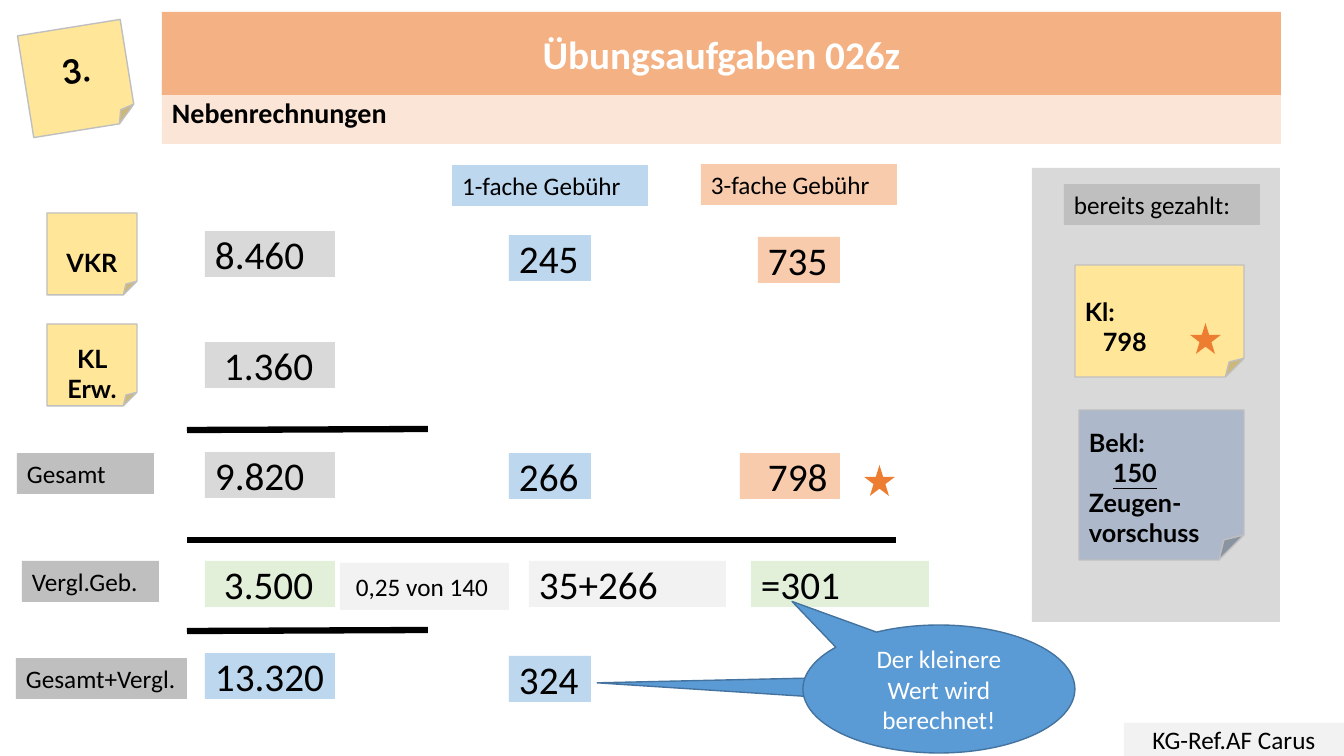
from dataclasses import dataclass

from lxml import etree
from pptx import Presentation
from pptx import util as u
from pptx.dml.color import RGBColor
from pptx.enum import shapes, text
from pptx.oxml.ns import qn

SCALE = 12192000 / 1344
SHAPE = shapes.MSO_SHAPE
LEFT, CENTER = text.PP_ALIGN.LEFT, text.PP_ALIGN.CENTER


def px(length):
    return u.Emu(round(length * SCALE))


@dataclass(frozen=True)
class Theme:
    black: str = "000000"
    white: str = "FFFFFF"
    pale: str = "F2F2F2"
    light: str = "D9D9D9"
    grey: str = "BFBFBF"
    header: str = "F4B183"
    band: str = "FBE5D6"
    peach: str = "F8CBAD"
    sky: str = "BDD7EE"
    mint: str = "E2F0D9"
    yellow: str = "FFE699"
    slate: str = "ADB9CA"
    star: str = "ED7D31"
    callout: str = "5B9BD5"
    outline: str = "43739E"
    sans: str = "Calibri"
    note: str = "Lato"
    label: int = 18
    subtitle: int = 20
    number: int = 24
    figure: int = 28
    thin: float = 1
    rule: float = 4.5


@dataclass(frozen=True)
class Line:
    words: str
    indent: int = 0
    underline: bool = False


class Sheet:
    def __init__(self, deck, theme):
        self.theme = theme
        self.page = deck.slides.add_slide(deck.slide_layouts[1])
        self.canvas = self.page.shapes

    def start_group(self):
        self.canvas = self.page.shapes.add_group_shape().shapes

    def end_group(self):
        self.canvas = self.page.shapes

    def paint(self, box, fill, outline=None):
        box.fill.solid()
        box.fill.fore_color.rgb = RGBColor.from_string(fill)
        if outline:
            box.line.color.rgb = RGBColor.from_string(outline)
            box.line.width = u.Pt(self.theme.thin)
        else:
            box.line.fill.background()

    def add_lines(self, box, lines, size, color=None, align=LEFT, bold=False, font=None, top=5):
        frame = box.text_frame
        frame.word_wrap = True
        frame.auto_size = text.MSO_AUTO_SIZE.NONE
        frame.vertical_anchor = text.MSO_ANCHOR.MIDDLE
        frame.margin_left = frame.margin_right = px(10)
        frame.margin_top, frame.margin_bottom = px(top), px(5)
        for index, line in enumerate(lines):
            para = frame.add_paragraph() if index else frame.paragraphs[0]
            para.alignment = align
            para.space_before = u.Pt(0)
            props = para._p.get_or_add_pPr()
            props.set("marL", str(px(line.indent)))
            props.set("indent", "0")
            etree.SubElement(props, qn("a:buNone"))
            span = para.add_run()
            span.text = line.words
            span.font.name = font or self.theme.sans
            span.font.size = u.Pt(size)
            span.font.bold = bold
            span.font.underline = line.underline
            span.font.color.rgb = RGBColor.from_string(color or self.theme.black)

    def placeholder(self, index, area, words, fill, size, color, align, preset):
        box = self.page.placeholders[index]
        box.left, box.top, box.width, box.height = map(px, area)
        outline = etree.SubElement(box.element.spPr, qn("a:prstGeom"), prst=preset)
        etree.SubElement(outline, qn("a:avLst"))
        self.paint(box, fill)
        self.add_lines(box, [Line(words)], size, color, align, bold=True)
        box.element.getparent().append(box.element)

    def shape(self, kind, area, fill, outline=None):
        box = self.canvas.add_shape(kind, *map(px, area))
        box.shadow.inherit = False
        self.paint(box, fill, outline)
        return box

    def label(self, area, words, fill, align=LEFT, indent=0):
        box = self.shape(SHAPE.RECTANGLE, area, fill)
        self.add_lines(box, [Line(words, indent)], self.theme.label, align=align)

    def figure(self, area, words, fill, indent=0):
        box = self.shape(SHAPE.RECTANGLE, area, fill)
        self.add_lines(box, [Line(words, indent)], self.theme.figure)

    def sticky(self, area, lines, fill, align=LEFT, size=None, top=35, turn=0):
        box = self.shape(SHAPE.FOLDED_CORNER, area, fill, self.theme.grey)
        box.rotation = turn
        self.add_lines(box, lines, size or self.theme.label, align=align,
                       bold=True, font=self.theme.note, top=top)

    def star(self, left, top):
        self.shape(SHAPE.STAR_5_POINT, (left, top, 31, 31), self.theme.star)

    def bubble(self, area, tip):
        box = self.shape(SHAPE.OVAL_CALLOUT, area, self.theme.callout, self.theme.outline)
        box.adjustments[0], box.adjustments[1] = tip
        return box

    def rule(self, start, end):
        line = self.canvas.add_connector(shapes.MSO_CONNECTOR.STRAIGHT, *map(px, start + end))
        line.line.color.rgb = RGBColor.from_string(self.theme.black)
        line.line.width = u.Pt(self.theme.rule)
        etree.SubElement(line.element.spPr, qn("a:effectLst"))


def main():
    deck = Presentation()
    deck.slide_width, deck.slide_height = px(1344), px(756)
    theme = Theme()
    sheet = Sheet(deck, theme)

    sheet.shape(SHAPE.RECTANGLE, (1032, 168, 248, 454), theme.light)
    sheet.placeholder(1, (162, 80, 1119, 64), "Nebenrechnungen", theme.band,
                      theme.subtitle, theme.black, LEFT, "rect")
    sheet.placeholder(0, (162, 12, 1119, 83), "Übungsaufgaben 026z", theme.header,
                      theme.figure, theme.white, CENTER, "roundRect")
    sheet.label((1124, 723, 220, 33), "KG-Ref.AF Carus", theme.pale, CENTER)
    sheet.sticky((25, 27, 104, 103), [Line("3.")], theme.yellow, CENTER,
                 theme.number, top=5, turn=350.9)

    for top, words in ((213, "VKR"), (324, "KL Erw.")):
        sheet.sticky((47, top, 90, 82), [Line(words)], theme.yellow, CENTER)

    for left, top, width, words, fill in (
        (452, 165, 196, "1-fache Gebühr", theme.sky),
        (701, 164, 196, "3-fache Gebühr", theme.peach),
        (17, 453, 137, "Gesamt", theme.grey),
        (22, 561, 137, "Vergl.Geb.", theme.grey),
        (16, 658, 171, "Gesamt+Vergl.", theme.grey),
        (1064, 184, 196, "bereits gezahlt:", theme.grey),
    ):
        sheet.label((left, top, width, 41), words, fill)
    sheet.label((340, 563, 169, 47), "0,25 von 140", theme.pale, indent=6)

    for top, words, fill, indent in (
        (231, "8.460", theme.light, 0),
        (342, "1.360", theme.light, 9),
        (452, "9.820", theme.light, 0),
        (561, "3.500", theme.mint, 9),
        (653, "13.320", theme.sky, 0),
    ):
        sheet.figure((205, top, 130, 46), words, fill, indent)

    for top, words in ((235, "245"), (453, "266"), (656, "324")):
        sheet.figure((509, top, 82, 46), words, theme.sky)

    sheet.figure((758, 237, 82, 46), "735", theme.peach)
    sheet.figure((740, 453, 100, 46), "798", theme.peach, 18)
    sheet.figure((529, 561, 197, 46), "35+266", theme.pale)
    sheet.figure((751, 561, 178, 46), "=301", theme.mint)

    for start, end in (((187, 430), (428, 429)), ((187, 540), (896, 540)),
                       ((187, 631), (428, 630))):
        sheet.rule(start, end)

    sheet.star(864, 465)
    sheet.start_group()
    sheet.sticky((1075, 265, 169, 112), [Line("Kl:"), Line("798", 18)], theme.yellow)
    sheet.star(1190, 323)
    sheet.end_group()
    sheet.sticky((1079, 410, 165, 150),
                 [Line("Bekl:"), Line("150", 24, True), Line("Zeugen-vorschuss")], theme.slate)

    sheet.start_group()
    sheet.bubble((823, 638, 234, 104), (-1.465, -0.069))
    hint = sheet.bubble((803, 625, 272, 128), (-0.54, -0.684))
    sheet.add_lines(hint, [Line("Der kleinere Wert wird berechnet!")],
                    theme.label, theme.white, CENTER)
    sheet.end_group()

    deck.save("out.pptx")


if __name__ == "__main__":
    main()
